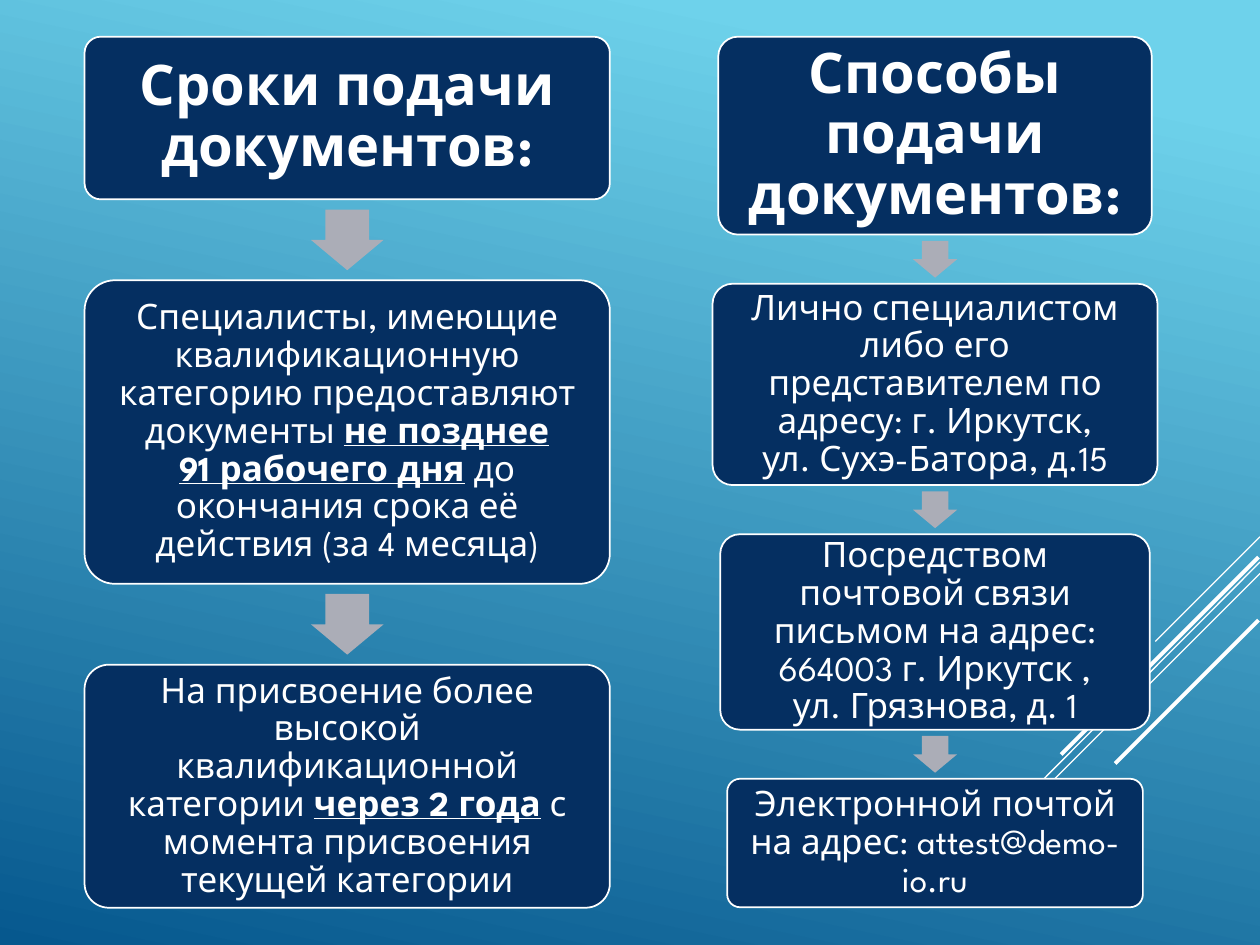
import pptx
import pptx.dml.color
import pptx.enum.shapes
import pptx.enum.text
import pptx.oxml.ns
import pptx.util
from lxml import etree

Cm = pptx.util.Cm
Pt = pptx.util.Pt
shape_types = pptx.enum.shapes.MSO_SHAPE


def color(value):
    return pptx.dml.color.RGBColor.from_string(value)


def add_text(paragraph, text, size=20, bold=False, underline=False):
    for index, line in enumerate(text.split("\n")):
        if index:
            paragraph.add_line_break()
        run = paragraph.add_run()
        run.text = line
        run.font.name = "League Spartan"
        run.font.size = Pt(size)
        run.font.bold = bold
        run.font.underline = underline
        run.font.color.rgb = color("FFFFFF")


presentation = pptx.Presentation()
presentation.slide_width = Cm(25.4)
presentation.slide_height = Cm(19.05)
slide = presentation.slides.add_slide(presentation.slide_layouts[6])

background = slide.background.fill
background.gradient()
background.gradient_angle = 258
for stop, position, value in zip(background.gradient_stops, (0.1, 1), ("6ED2EB", "06588E")):
    stop.position = position
    stop.color.rgb = color(value)

diagonals = [
    (25.4, 10.82, 21.06, 12.93, 0.75),
    (25.4, 11.33, 18.54, 18.21, 0.75),
    (25.4, 11.56, 21.03, 15.93, 0.75),
    (25.37, 11.23, 21.39, 15.21, 2.25),
    (25.37, 12.5, 22.48, 15.39, 2.25),
]
diagonals[0] = (25.4, 10.82, 23.29, 12.93, 0.75)
for start_x, start_y, end_x, end_y, width in diagonals:
    connector = slide.shapes.add_connector(
        pptx.enum.shapes.MSO_CONNECTOR.STRAIGHT, Cm(start_x), Cm(start_y), Cm(end_x), Cm(end_y)
    )
    connector.line.color.rgb = color("FFFFFF")
    connector.line.width = Pt(width)
    etree.SubElement(connector._element.spPr, pptx.oxml.ns.qn("a:effectLst"))

heading = {"size": 32, "bold": True}
accent = {"bold": True, "underline": True}
deadlines = [
    (10.59, 3.28, [("Сроки подачи документов:", heading)]),
    (10.59, 6.12, [
        ("Специалисты, имеющие квалификационную категорию предоставляют документы ", {}),
        ("не позднее\n91 рабочего дня", accent),
        (" до окончания срока её действия (за 4 месяца)", {}),
    ]),
    (10.59, 4.9, [
        ("На присвоение более высокой квалификационной категории ", {}),
        ("через 2 года", accent),
        (" с момента присвоения текущей категории", {}),
    ]),
]
methods = [
    (8.74, 3.99, [("Способы подачи документов:", heading)]),
    (8.97, 4.06, [
        ("Лично специалистом либо его представителем по адресу: г. Иркутск,\nул. Сухэ-Батора, д.15", {}),
    ]),
    (8.66, 3.94, [
        ("Посредством почтовой связи письмом на адрес:\n664003 г. Иркутск ,\nул. Грязнова, д. 1", {}),
    ]),
    (8.38, 2.59, [("Электронной почтой на адрес: attest@demo-io.ru", {})]),
]

for center, gap, boxes in [(7, 1.63, deadlines), (18.85, 0.99, methods)]:
    top = 0.74
    for index, (width, height, parts) in enumerate(boxes):
        if index:
            arrow_width, arrow_height = 0.9 * gap, 0.75 * gap
            arrow = slide.shapes.add_shape(
                shape_types.DOWN_ARROW,
                Cm(center - arrow_width / 2), Cm(top - (gap + arrow_height) / 2),
                Cm(arrow_width), Cm(arrow_height),
            )
            arrow.adjustments[0] = 0.6
            arrow.adjustments[1] = 0.5
            arrow.shadow.inherit = False
            arrow.fill.solid()
            arrow.fill.fore_color.rgb = color("ABADB7")
            arrow.line.fill.background()

        box = slide.shapes.add_shape(
            shape_types.ROUNDED_RECTANGLE, Cm(center - width / 2), Cm(top), Cm(width), Cm(height)
        )
        box.adjustments[0] = 0.1
        box.shadow.inherit = False
        box.fill.solid()
        box.fill.fore_color.rgb = color("052F61")
        box.line.color.rgb = color("FFFFFF")
        box.line.width = Pt(1)

        frame = box.text_frame
        frame.word_wrap = True
        frame.vertical_anchor = pptx.enum.text.MSO_ANCHOR.MIDDLE
        inset = Cm(0.2 if index else 0.33)
        frame.margin_left = frame.margin_right = inset
        frame.margin_top = frame.margin_bottom = inset
        paragraph = frame.paragraphs[0]
        paragraph.alignment = pptx.enum.text.PP_ALIGN.CENTER
        paragraph.line_spacing = 0.9
        for text, text_format in parts:
            add_text(paragraph, text, **text_format)
        top += height + gap

presentation.save("out.pptx")
